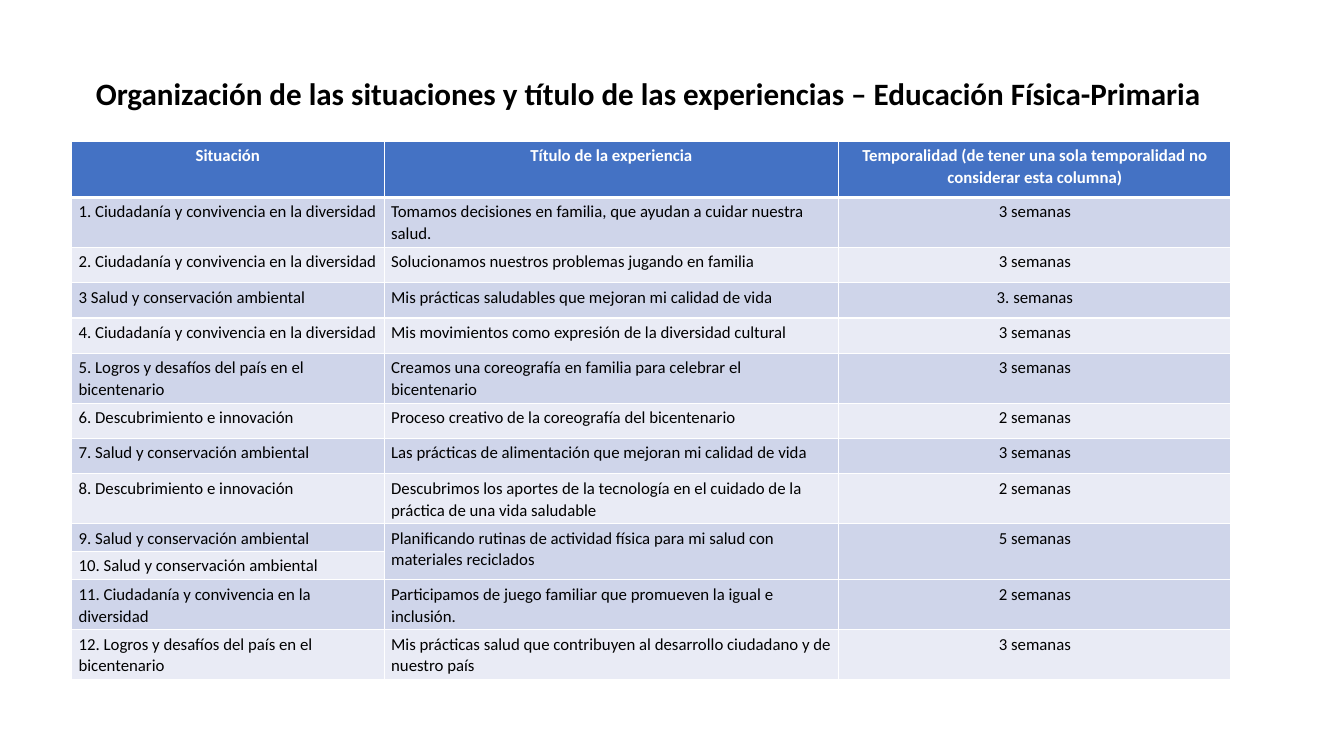
from dataclasses import dataclass

from lxml import etree
from pptx import Presentation
from pptx.dml.color import RGBColor
from pptx.enum.text import MSO_ANCHOR, MSO_AUTO_SIZE, PP_ALIGN
from pptx.oxml.ns import qn
from pptx.util import Inches, Pt

LEFT, CENTER = PP_ALIGN.LEFT, PP_ALIGN.CENTER
MIDDLE, NO_FIT = MSO_ANCHOR.MIDDLE, MSO_AUTO_SIZE.NONE

FONT = "Calibri"
BLACK, WHITE = "000000", "FFFFFF"
HEADER_FILL = "4472C4"
BANDS = ("CFD5EA", "E9EBF5")

TITLE = ("Organización de las situaciones y título de las experiencias "
         "– Educación Física-Primaria")
COL_WIDTHS = (3.1, 4.51, 3.89)
ROW_H = 0.35


@dataclass
class Row:
    situation: str
    experience: str = ""
    duration: str = ""
    height: float = ROW_H
    joins_above: bool = False  # shares experience and duration with the row above


ROWS = [
    Row("Situación", "Título de la experiencia",
        "Temporalidad (de tener una sola temporalidad no considerar esta columna)", 0.56),
    Row("1. Ciudadanía y convivencia en la diversidad",
        "Tomamos decisiones en familia, que ayudan a cuidar nuestra salud.", "3 semanas"),
    Row("2. Ciudadanía y convivencia en la diversidad",
        "Solucionamos nuestros problemas jugando en familia", "3 semanas"),
    Row("3 Salud y conservación ambiental",
        "Mis prácticas saludables que mejoran mi calidad de vida", "3. semanas"),
    Row("4. Ciudadanía y convivencia en la diversidad",
        "Mis movimientos como expresión de la diversidad cultural", "3 semanas"),
    Row("5. Logros y desafíos del país en el bicentenario",
        "Creamos una coreografía en familia para celebrar el bicentenario", "3 semanas"),
    Row("6. Descubrimiento e innovación",
        "Proceso creativo de la coreografía del bicentenario", "2 semanas"),
    Row("7. Salud y conservación ambiental",
        "Las prácticas de alimentación que mejoran mi calidad de vida", "3 semanas"),
    Row("8. Descubrimiento e innovación",
        "Descubrimos los aportes de la tecnología en el cuidado de la práctica "
        "de una vida saludable", "2 semanas", 0.49),
    Row("9. Salud y conservación ambiental",
        "Planificando rutinas de actividad física para mi salud con materiales reciclados",
        "5 semanas", 0.21),
    Row("10. Salud y conservación ambiental", height=0.28, joins_above=True),
    Row("11. Ciudadanía y convivencia en la diversidad",
        "Participamos de juego familiar que promueven la igual e inclusión.", "2 semanas"),
    Row("12. Logros y desafíos del país en el bicentenario",
        "Mis prácticas salud que contribuyen al desarrollo ciudadano y de nuestro país",
        "3 semanas"),
]


def rgb(color: str) -> RGBColor:
    return RGBColor.from_string(color)


def write(tf, text: str, *, size: float, color: str = BLACK, bold: bool = False,
          align=LEFT, spacing: float = 1.0, after: float = 0) -> None:
    p = tf.paragraphs[0]
    p.alignment, p.line_spacing = align, spacing
    p.space_before, p.space_after = Pt(0), Pt(after)
    r = p.add_run()
    r.text = text
    r.font.name, r.font.size, r.font.bold = FONT, Pt(size), bold
    r.font.color.rgb = rgb(color)


def set_borders(cell, top: float = 1, bottom: float = 1) -> None:
    tc_pr = cell._tc.get_or_add_tcPr()
    sides = (("a:lnL", 1), ("a:lnR", 1), ("a:lnT", top), ("a:lnB", bottom))
    for i, (tag, width) in enumerate(sides):
        ln = etree.Element(qn(tag), w=str(Pt(width)))
        fill = etree.SubElement(ln, qn("a:solidFill"))
        etree.SubElement(fill, qn("a:srgbClr"), val=WHITE)
        tc_pr.insert(i, ln)


def fill_cell(cell, text: str, row: int, col: int) -> None:
    header = row == 0
    cell.margin_left = cell.margin_right = Inches(0.07)
    cell.margin_top = cell.margin_bottom = Inches(0.03)
    cell.fill.solid()
    cell.fill.fore_color.rgb = rgb(HEADER_FILL if header else BANDS[(row - 1) % 2])
    set_borders(cell, top=3 if row == 1 else 1, bottom=3 if header else 1)
    if text:
        write(cell.text_frame, text, size=12, color=WHITE if header else BLACK,
              bold=header, align=CENTER if header or col == 2 else LEFT,
              spacing=1.07, after=8)


def add_title(s) -> None:
    sp = s.shapes.title
    sp.left, sp.top = Inches(0.85), Inches(0.22)
    sp.width, sp.height = Inches(11.5), Inches(1.45)
    tf = sp.text_frame
    tf.word_wrap, tf.auto_size, tf.vertical_anchor = True, NO_FIT, MIDDLE
    write(tf, TITLE, size=22.2, bold=True, spacing=0.9)


def add_schedule(s) -> None:
    height = sum(row.height for row in ROWS)
    table = s.shapes.add_table(len(ROWS), len(COL_WIDTHS), Inches(0.71), Inches(1.4),
                               Inches(sum(COL_WIDTHS)), Inches(height)).table
    for col, width in enumerate(COL_WIDTHS):
        table.columns[col].width = Inches(width)
    for i, row in enumerate(ROWS):
        table.rows[i].height = Inches(row.height)
        for col, text in enumerate((row.situation, row.experience, row.duration)):
            cell = table.cell(i, col)
            fill_cell(cell, text, i, col)
            if row.joins_above and col > 0:
                table.cell(i - 1, col).merge(cell)


def main() -> None:
    prs = Presentation()
    prs.slide_width, prs.slide_height = Inches(13.33), Inches(7.5)
    s = prs.slides.add_slide(prs.slide_layouts[5])  # title only
    add_title(s)
    add_schedule(s)
    prs.save("out.pptx")


if __name__ == "__main__":
    main()
